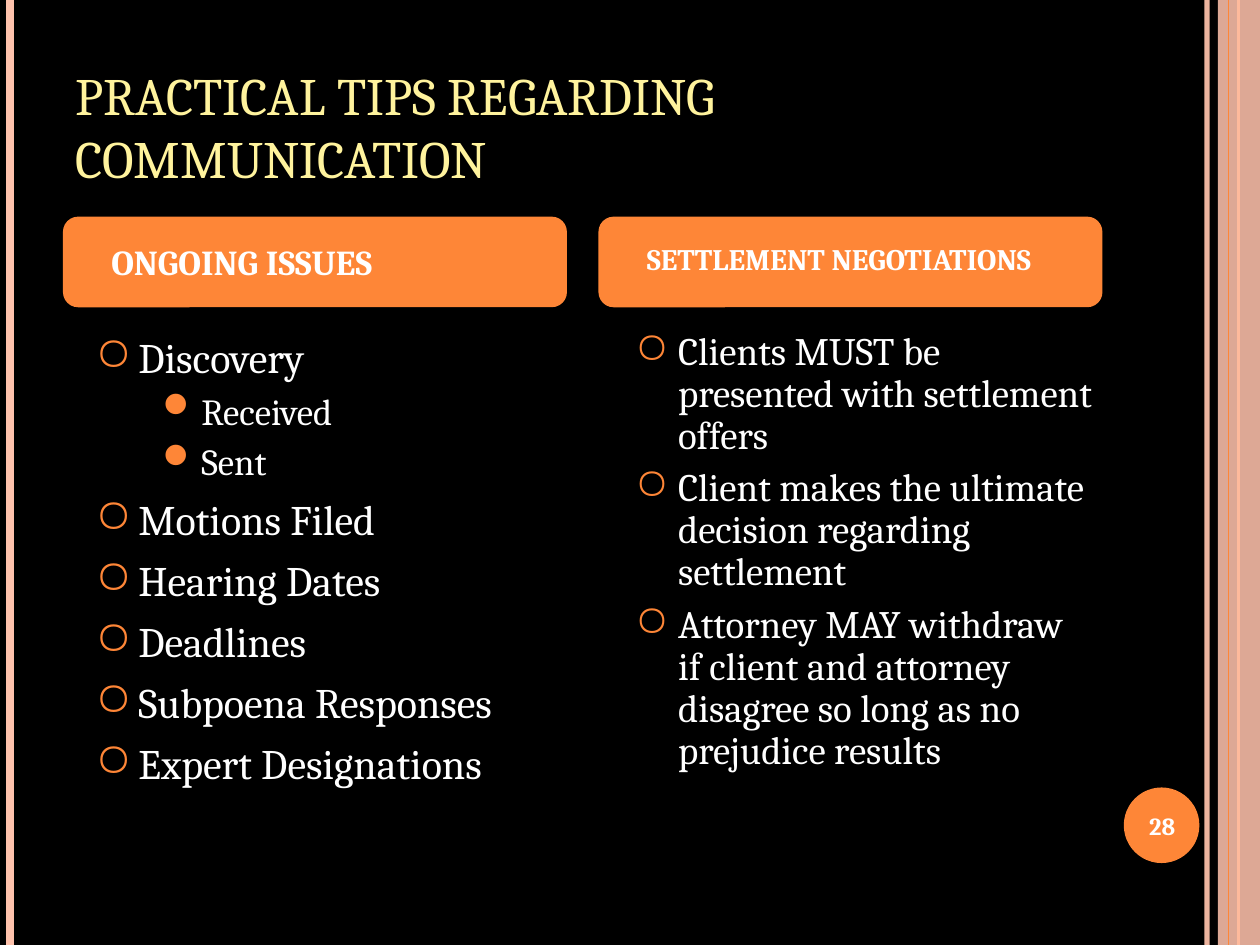
from dataclasses import dataclass
from lxml.etree import SubElement
from pptx import Presentation
from pptx.dml.color import RGBColor
from pptx.enum.shapes import MSO_CONNECTOR, MSO_SHAPE
from pptx.enum.text import MSO_ANCHOR, PP_ALIGN
from pptx.oxml.ns import qn
from pptx.util import Pt

FACE = "Cambria"
ORANGE, PINK, WHITE, CREAM = "FE8637", "FEC2AC", "FFFFFF", "FFF39D"
WIDE, HIGH = 720, 540


@dataclass
class Rule:
    x: float
    width: float
    hue: str
    alpha: int = 100


@dataclass
class Item:
    text: str
    level: int = 0


@dataclass
class Column:
    left: float
    head: str
    head_size: float
    head_spacing: float
    body_left: float
    sizes: tuple[float, ...]
    spacing: float
    items: list[Item]


@dataclass
class Style:
    mark: str
    scale: int
    left: float
    hang: float
    before: float


STYLES = [Style("○", 110, 36, -24.5, 6), Style("⚫", 120, 72, -25.2, 3.6)]
RULES = [Rule(689.8, 3, PINK, 93), Rule(5.8, 4.5, PINK), Rule(707.8, 1.5, ORANGE)]
EDGE = Rule(702, 0.75, ORANGE)
COLUMNS = [
    Column(36, "ONGOING ISSUES", 20, 1, 36, (24, 21), 1, [
        Item("Discovery"), Item("Received", 1), Item("Sent", 1),
        Item("Motions Filed"), Item("Hearing Dates"), Item("Deadlines"),
        Item("Subpoena Responses"), Item("Expert Designations")]),
    Column(342, "SETTLEMENT NEGOTIATIONS", 17, 0.8, 344.4, (22.2,), 0.9, [
        Item("Clients MUST be presented with settlement offers"),
        Item("Client makes the ultimate decision regarding settlement"),
        Item("Attorney MAY withdraw if client and attorney disagree "
             "so long as no prejudice results")]),
]


def paint(target, hue: str, alpha: int = 100) -> None:
    """Give a fill a solid colour, with optional transparency."""
    target.solid()
    target.fore_color.rgb = RGBColor.from_string(hue)
    if alpha < 100:
        node = next(target._xPr.iter(qn("a:srgbClr")))
        SubElement(node, qn("a:alpha")).set("val", str(alpha * 1000))


def style(para, size: float, hue: str = WHITE, bold: bool = False) -> None:
    for run in para.runs:
        run.font.name, run.font.size, run.font.bold = FACE, Pt(size), bold
        paint(run.font.fill, hue)


def indent(para, left: float, hang: float) -> None:
    props = para._p.get_or_add_pPr()
    props.set("marL", str(Pt(left)))
    props.set("indent", str(Pt(hang)))


def bullet(para, look: Style) -> None:
    props = para._p.get_or_add_pPr()
    hue = SubElement(props, qn("a:buClr"))
    SubElement(hue, qn("a:srgbClr")).set("val", ORANGE)
    SubElement(props, qn("a:buSzPct")).set("val", str(look.scale * 1000))
    SubElement(props, qn("a:buChar")).set("char", look.mark)


def draw_rule(slide, rule: Rule) -> None:
    line = slide.shapes.add_connector(
        MSO_CONNECTOR.STRAIGHT, Pt(rule.x), Pt(0), Pt(rule.x), Pt(HIGH))
    line.line.width = Pt(rule.width)
    paint(line.line.fill, rule.hue, rule.alpha)
    SubElement(line._element.spPr, qn("a:effectLst"))


def draw_shape(slide, kind, box: tuple[float, ...], hue: str, alpha: int = 100):
    shape = slide.shapes.add_shape(kind, *map(Pt, box))
    shape.shadow.inherit = False
    paint(shape.fill, hue, alpha)
    shape.line.fill.background()
    return shape


def draw_list(slide, col: Column) -> None:
    box = slide.shapes.add_textbox(Pt(col.body_left), Pt(186), Pt(288), Pt(306))
    frame = box.text_frame
    frame.word_wrap = True
    frame.text = "\n".join(item.text for item in col.items)
    for num, (para, item) in enumerate(zip(frame.paragraphs, col.items)):
        look = STYLES[item.level]
        para.level = item.level
        para.line_spacing = col.spacing
        para.space_before = Pt(look.before if num else 0)
        indent(para, look.left, look.hang)
        bullet(para, look)
        style(para, col.sizes[item.level])


def draw_head(slide, col: Column) -> None:
    shape = draw_shape(slide, MSO_SHAPE.ROUNDED_RECTANGLE,
                       (col.left, 123.8, 288, 51.8), ORANGE)
    shape.adjustments[0] = 0.167
    frame = shape.text_frame
    frame.text = col.head
    frame.vertical_anchor = MSO_ANCHOR.MIDDLE
    para = frame.paragraphs[0]
    para.alignment = PP_ALIGN.LEFT
    para.line_spacing = col.head_spacing
    indent(para, 36, -18)
    style(para, col.head_size, bold=True)


def main() -> None:
    deck = Presentation()
    deck.slide_width, deck.slide_height = Pt(WIDE), Pt(HIGH)
    slide = deck.slides.add_slide(deck.slide_layouts[5])
    paint(slide.background.fill, "000000")

    # Side stripes
    for rule in RULES:
        draw_rule(slide, rule)
    draw_shape(slide, MSO_SHAPE.RECTANGLE, (696, 0, 24, HIGH), PINK, 87)
    draw_rule(slide, EDGE)

    # Title
    title = slide.shapes.title
    title.left, title.top, title.width, title.height = map(Pt, (36, 21.6, 594, 90))
    frame = title.text_frame
    frame.text = "PRACTICAL TIPS REGARDING COMMUNICATION"
    frame.vertical_anchor = MSO_ANCHOR.BOTTOM
    frame.paragraphs[0].alignment = PP_ALIGN.LEFT
    style(frame.paragraphs[0], 30, CREAM)

    # Page number
    draw_shape(slide, MSO_SHAPE.OVAL, (642.2, 450, 43.2, 43.2), ORANGE)
    page = slide.shapes.add_textbox(Pt(640), Pt(451.4), Pt(48.2), Pt(41))
    frame = page.text_frame
    frame.word_wrap = True
    frame.text = "28"
    frame.vertical_anchor = MSO_ANCHOR.MIDDLE
    frame.paragraphs[0].alignment = PP_ALIGN.CENTER
    style(frame.paragraphs[0], 14, bold=True)

    # Columns
    for col in COLUMNS:
        draw_list(slide, col)
        draw_head(slide, col)

    deck.save("out.pptx")


if __name__ == "__main__":
    main()
